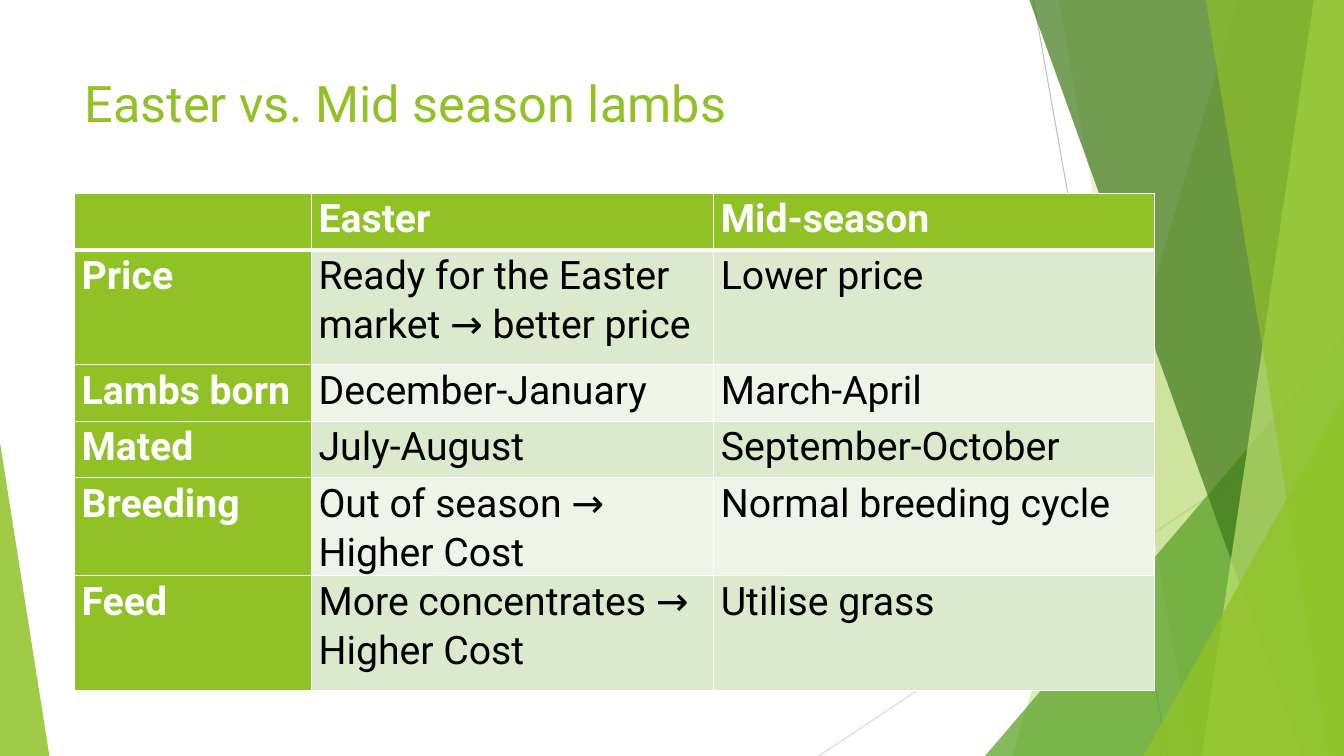
from lxml import etree
from pptx import Presentation
from pptx.dml.color import RGBColor
from pptx.enum.shapes import MSO_CONNECTOR as Connector, MSO_SHAPE as Preset
from pptx.enum.text import MSO_ANCHOR as Anchor, PP_ALIGN as Align
from pptx.oxml.ns import qn
from pptx.util import Inches, Pt

FONT = "Roboto"
GREEN, WHITE, BLACK = "90C226", "FFFFFF", "000000"
BANDS = ["EEF4E8", "DBE9CD"]
BOTTOM, RIGHT = 7.5, 13.33

COLUMN_WIDTHS = [2.35, 3.99, 4.37]
ROW_HEIGHTS = [0.56, 1.14, 0.56, 0.56, 0.56, 1.14]
ROWS = [
    ["", "Easter", "Mid-season"],
    ["Price", "Ready for the Easter market → better price", "Lower price"],
    ["Lambs born", "December-January", "March-April"],
    ["Mated", "July-August", "September-October"],
    ["Breeding", "Out of season → Higher Cost", "Normal breeding cycle"],
    ["Feed", "More concentrates → Higher Cost", "Utilise grass"],
]


def color(hex_value):
    return RGBColor.from_string(hex_value)


def write(frame, text, size=28, ink=BLACK, bold=False, spacing=None):
    para = frame.paragraphs[0]
    para.alignment = Align.LEFT
    para.line_spacing = spacing
    para.font.size = Pt(size)
    if text:
        span = para.add_run()
        span.text = text
        span.font.name = FONT
        span.font.size = Pt(size)
        span.font.bold = bold
        span.font.color.rgb = color(ink)


def paint(shape, hex_value, opacity):
    shape.shadow.inherit = False
    shape.line.fill.background()
    shape.fill.solid()
    shape.fill.fore_color.rgb = color(hex_value)
    tint = shape.element.spPr.find(qn("a:solidFill")).find(qn("a:srgbClr"))
    etree.SubElement(tint, qn("a:alpha")).set("val", str(opacity * 1000))


def add_line(page, start, end, hex_value):
    line = page.shapes.add_connector(
        Connector.STRAIGHT, *[Inches(value) for value in start + end])
    line.line.color.rgb = color(hex_value)
    line.line.width = Pt(0.75)
    etree.SubElement(line.element.spPr, qn("a:effectLst"))


def add_shard(page, top_left, bottom_left, hex_value, opacity):
    """Add a full-height panel with a slanted left edge."""
    corners = [(top_left, 0), (RIGHT, 0), (RIGHT, BOTTOM), (bottom_left, BOTTOM)]
    points = [(Inches(x), Inches(y)) for x, y in corners]
    outline = page.shapes.build_freeform(*points[0])
    outline.add_line_segments(points[1:], close=True)
    paint(outline.convert_to_shape(), hex_value, opacity)


def add_triangle(page, left, top, width, apex, hex_value, opacity):
    triangle = page.shapes.add_shape(
        Preset.ISOSCELES_TRIANGLE, Inches(left), Inches(top),
        Inches(width), Inches(BOTTOM - top))
    triangle.adjustments[0] = apex
    paint(triangle, hex_value, opacity)


def add_backdrop(page):
    add_line(page, (10.25, 0), (11.58, BOTTOM), "BFBFBF")
    add_line(page, (RIGHT, 4.03), (8.12, BOTTOM), "D9D9D9")
    add_shard(page, 12.28, 10.04, GREEN, 30)
    add_shard(page, 10.5, 11.83, GREEN, 20)
    add_triangle(page, 9.77, 3.33, 3.56, 1, "54A021", 72)
    add_shard(page, 10.21, 12.91, "3F7819", 70)
    add_shard(page, 13.03, 11.92, "C0E474", 70)
    add_shard(page, 11.96, 13.18, GREEN, 65)
    add_triangle(page, 11.34, 3.93, 1.99, 1, GREEN, 80)
    add_triangle(page, 0, 4.39, 0.49, 0, GREEN, 85)


def add_title(page, text):
    title = page.shapes.title
    title.left, title.top = Inches(0.74), Inches(0.67)
    title.width, title.height = Inches(9.4), Inches(1.44)
    title.text_frame.vertical_anchor = Anchor.TOP
    write(title.text_frame, text, size=36, ink=GREEN)
    # Bring the title in front of the backdrop
    title.element.getparent().append(title.element)


def set_borders(cell, **widths):
    properties = cell._tc.get_or_add_tcPr()
    for index, side in enumerate("LRTB"):
        border = etree.Element(qn(f"a:ln{side}"), w=str(Pt(widths.get(side, 1))))
        fill = etree.SubElement(border, qn("a:solidFill"))
        etree.SubElement(fill, qn("a:srgbClr")).set("val", WHITE)
        properties.insert(index, border)


def add_comparison(page):
    frame = page.shapes.add_table(
        len(ROWS), len(COLUMN_WIDTHS), Inches(0.74), Inches(1.92),
        Inches(sum(COLUMN_WIDTHS)), Inches(sum(ROW_HEIGHTS)))
    table = frame.table
    table.first_col = True
    for column, width in zip(table.columns, COLUMN_WIDTHS):
        column.width = Inches(width)
    for row, height in zip(table.rows, ROW_HEIGHTS):
        row.height = Inches(height)

    for row_index, texts in enumerate(ROWS):
        for column_index, text in enumerate(texts):
            cell = table.cell(row_index, column_index)
            heading = row_index == 0 or column_index == 0
            cell.margin_left = cell.margin_right = Inches(0.07)
            cell.margin_top = cell.margin_bottom = 0
            cell.fill.solid()
            cell.fill.fore_color.rgb = color(GREEN if heading else BANDS[row_index % 2])
            # A thick rule divides the header from the body
            set_borders(cell, T=3 if row_index == 1 else 1, B=3 if row_index == 0 else 1)
            write(cell.text_frame, text, ink=WHITE if heading else BLACK,
                  bold=heading, spacing=1.07)


def main():
    deck = Presentation()
    deck.slide_width, deck.slide_height = Inches(RIGHT), Inches(BOTTOM)
    page = deck.slides.add_slide(deck.slide_layouts[5])
    add_backdrop(page)
    add_title(page, "Easter vs. Mid season lambs")
    add_comparison(page)
    deck.save("out.pptx")


if __name__ == "__main__":
    main()
